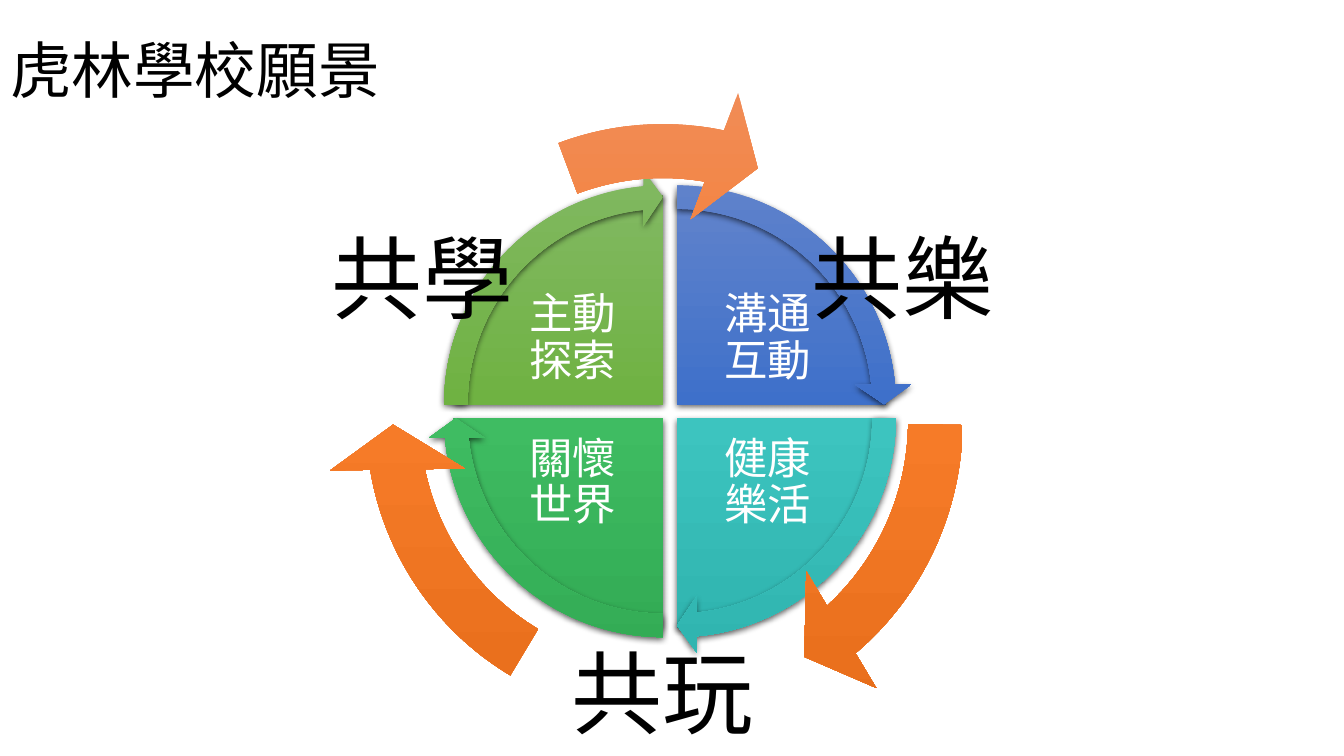
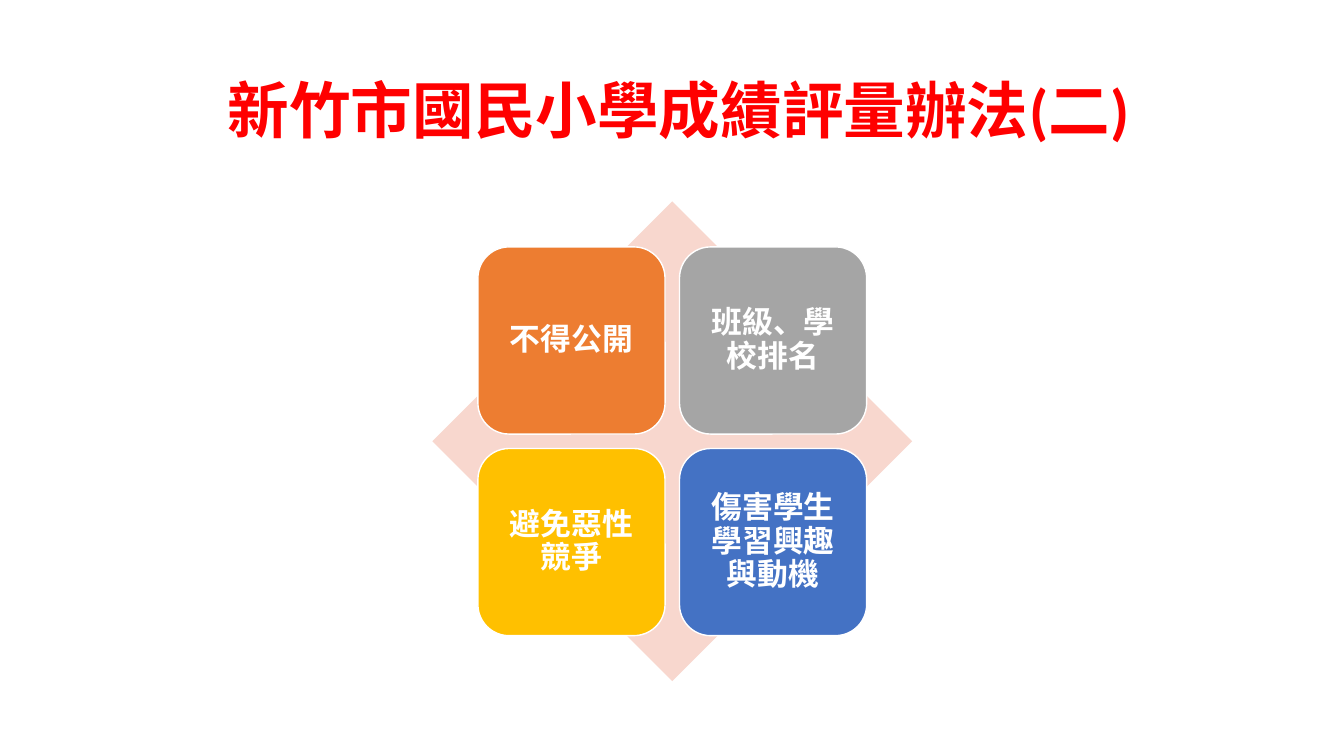
from copy import deepcopy
from dataclasses import dataclass

from lxml import etree
from pptx import Presentation
from pptx.dml.color import RGBColor
from pptx.enum.shapes import MSO_SHAPE
from pptx.enum.text import MSO_ANCHOR, PP_ALIGN
from pptx.oxml.ns import qn
from pptx.util import Pt

PIE, ARROW = MSO_SHAPE.PIE, MSO_SHAPE.CIRCULAR_ARROW
DIAMOND, TILE = MSO_SHAPE.DIAMOND, MSO_SHAPE.ROUNDED_RECTANGLE
MIDDLE = MSO_ANCHOR.MIDDLE
LEFT, CENTER = PP_ALIGN.LEFT, PP_ALIGN.CENTER
TITLE_ONLY = 5
DEGREE = 0.6  # one degree in the units of an angle adjustment


@dataclass(frozen=True)
class Theme:
    # Colours
    black: str = "000000"
    white: str = "FFFFFF"
    red: str = "FF0000"
    pink: str = "F8D7CE"
    orange: str = "ED7D31"
    gray: str = "A5A5A5"
    gold: str = "FFC000"
    blue: str = "4472C4"
    blue_blend: tuple = ("6183CB", "3E70CA", "3062BB")
    teal_blend: tuple = ("60C6C1", "3DC4BF", "30B5B0")
    green_blend: tuple = ("60C077", "3FBC62", "33AC55")
    lime_blend: tuple = ("81B861", "6FB242", "62A336")
    orange_blend: tuple = ("F18C57", "F67B28", "E56C19")
    # Type
    font: str = "Calibri"
    tile_font: str = "Noto Sans CJK SC"
    title_size: int = 44
    label_size: int = 65
    quarter_size: int = 31
    tile_size: int = 22
    line_spacing: float = 0.9
    space_after: float = 0.35


class Deck:
    def __init__(self, theme):
        self.theme = theme
        self.presentation = Presentation()
        self.presentation.slide_width = Pt(960)
        self.presentation.slide_height = Pt(540)
        self.page = None

    def new_page(self):
        layout = self.presentation.slide_layouts[TITLE_ONLY]
        self.page = self.presentation.slides.add_slide(layout)

    def title(self, text, left, top, width, height, color, bold=False, indent=0):
        box = self.page.shapes.title
        box.left, box.top, box.width, box.height = map(Pt, (left, top, width, height))
        self.set_text(box, text, self.theme.title_size, color, bold, align=LEFT)
        box.text_frame.margin_left = Pt(7.2 + indent)

    def set_text(self, box, text, size, color, bold=False, font=None, inset=7.2,
                 align=CENTER):
        frame = box.text_frame
        frame.text = text
        frame.word_wrap = True
        frame.vertical_anchor = MIDDLE
        frame.margin_left = frame.margin_right = Pt(inset)
        frame.margin_top = frame.margin_bottom = Pt(inset)
        for para in frame.paragraphs:
            para.alignment = align
            para.line_spacing = self.theme.line_spacing
            if align == CENTER:
                para.space_after = Pt(size * self.theme.space_after)
            for span in para.runs:
                span.font.name = font or self.theme.font
                span.font.size = Pt(size)
                span.font.bold = bold
                span.font.color.rgb = RGBColor.from_string(color)

    def label(self, text, x, y, width, height, size, color):
        """Add a text box centred on x, y."""
        box = self.page.shapes.add_textbox(
            Pt(x - width / 2), Pt(y - height / 2), Pt(width), Pt(height))
        self.set_text(box, text, size, color, inset=3)

    def shape(self, kind, x, y, width, height, fill, adjustments=(), line=None):
        """Add a preset shape centred on x, y; a tuple of colours makes a blend."""
        shape = self.page.shapes.add_shape(
            kind, Pt(x - width / 2), Pt(y - height / 2), Pt(width), Pt(height))
        shape.shadow.inherit = False
        for index, value in enumerate(adjustments):
            shape.adjustments[index] = value
        if isinstance(fill, tuple):
            self.blend(shape, fill)
        else:
            shape.fill.solid()
            shape.fill.fore_color.rgb = RGBColor.from_string(fill)
        if line:
            shape.line.color.rgb = RGBColor.from_string(line)
            shape.line.width = Pt(1)
        else:
            shape.line.fill.background()
        return shape

    def blend(self, shape, colors):
        fill = shape.fill
        fill.gradient()
        fill.gradient_angle = 270
        stop_list = shape.element.spPr.find(".//" + qn("a:gsLst"))
        stop_list.insert(1, deepcopy(stop_list[0]))
        for index, (stop, color) in enumerate(zip(fill.gradient_stops, colors)):
            stop.position = index / 2
            stop.color.rgb = RGBColor.from_string(color)

    def arrow(self, x, y, width, height, fill, start, end, thickness, tip, head):
        adjustments = (thickness, tip * DEGREE, end * DEGREE, start * DEGREE, head)
        return self.shape(ARROW, x, y, width, height, fill, adjustments)

    def cast_shadow(self, shape):
        effects = shape.element.spPr.find(qn("a:effectLst"))
        shadow = etree.SubElement(
            effects, qn("a:outerShdw"), blurRad=str(Pt(4.5)), dist=str(Pt(1.5)),
            dir="5400000", algn="ctr", rotWithShape="0")
        color = etree.SubElement(shadow, qn("a:srgbClr"), val=self.theme.black)
        etree.SubElement(color, qn("a:alpha"), val="63000")


def vision_page(deck):
    theme = deck.theme
    deck.new_page()

    # Quarters of the wheel: column, row, start angle, blend, text
    quarters = [
        (1, -1, 270, theme.blue_blend, "溝通\v互動"),
        (1, 1, 0, theme.teal_blend, "健康\v樂活"),
        (-1, 1, 90, theme.green_blend, "關懷\v世界"),
        (-1, -1, 180, theme.lime_blend, "主動\v探索"),
    ]
    center_x, center_y, gap = 478.6, 293.8, 5
    for column, row, start, colors, text in quarters:
        angles = (start * DEGREE, (start + 90) % 360 * DEGREE)
        pie = deck.shape(PIE, center_x + column * gap, center_y + row * gap,
                         299.5, 299.5, colors, angles)
        deck.cast_shadow(pie)
        deck.label(text, center_x + column * 69.5, center_y + row * 51.5,
                   110, 82, theme.quarter_size, theme.white)

    # Arrows along the rim
    for column, row, start, colors, _ in quarters:
        rim = deck.arrow(center_x + column * gap, center_y + row * gap, 336.2, 336.2,
                         colors, start, start + 84.54, 0.05, 5.46, 0.06)
        deck.cast_shadow(rim)

    # Outer words, each followed by its arrow: x, y, width, height, start, end
    outer = [
        ("共樂", 644.8, 202, 486.7, 491.8, 0.81, 49.47),
        ("共玩", 473.4, 498.6, 481.7, 481.7, 120.95, 169.6),
        ("共學", 302, 202, 481.7, 481.7, 249.4, 281.01),
    ]
    for text, x, y, width, height, start, end in outer:
        deck.label(text, x, y, 204, 82, theme.label_size, theme.black)
        deck.arrow(473.5, 300.6, width, height, theme.orange_blend,
                   start, end, 0.08, 9.59, 0.1)

    deck.title("虎林學校願景", 0, 7.2, 325.4, 90, theme.black)


def rules_page(deck):
    theme = deck.theme
    deck.new_page()
    deck.title("新竹市國民小學成績評量辦法(二)", 66, 28.8, 828, 104.4,
               theme.red, bold=True, indent=89.5)

    # Diamond with a two by two grid of tiles
    center_x, center_y, pitch = 480.2, 315.2, 144
    deck.shape(DIAMOND, center_x, center_y, 342.8, 342.8, theme.pink)
    tiles = [
        ("不得公開", theme.orange),
        ("班級、學校排名", theme.gray),
        ("避免惡性競爭", theme.gold),
        ("傷害學生學習興趣與動機", theme.blue),
    ]
    for index, (text, color) in enumerate(tiles):
        row, column = divmod(index, 2)
        tile = deck.shape(TILE, center_x + (column - 0.5) * pitch,
                          center_y + (row - 0.5) * pitch, 133.7, 133.7,
                          color, line=theme.white)
        deck.set_text(tile, text, theme.tile_size, theme.white, bold=True,
                      font=theme.tile_font, inset=6.5)


def main():
    deck = Deck(Theme())
    vision_page(deck)
    rules_page(deck)
    deck.presentation.save("out.pptx")


if __name__ == "__main__":
    main()
